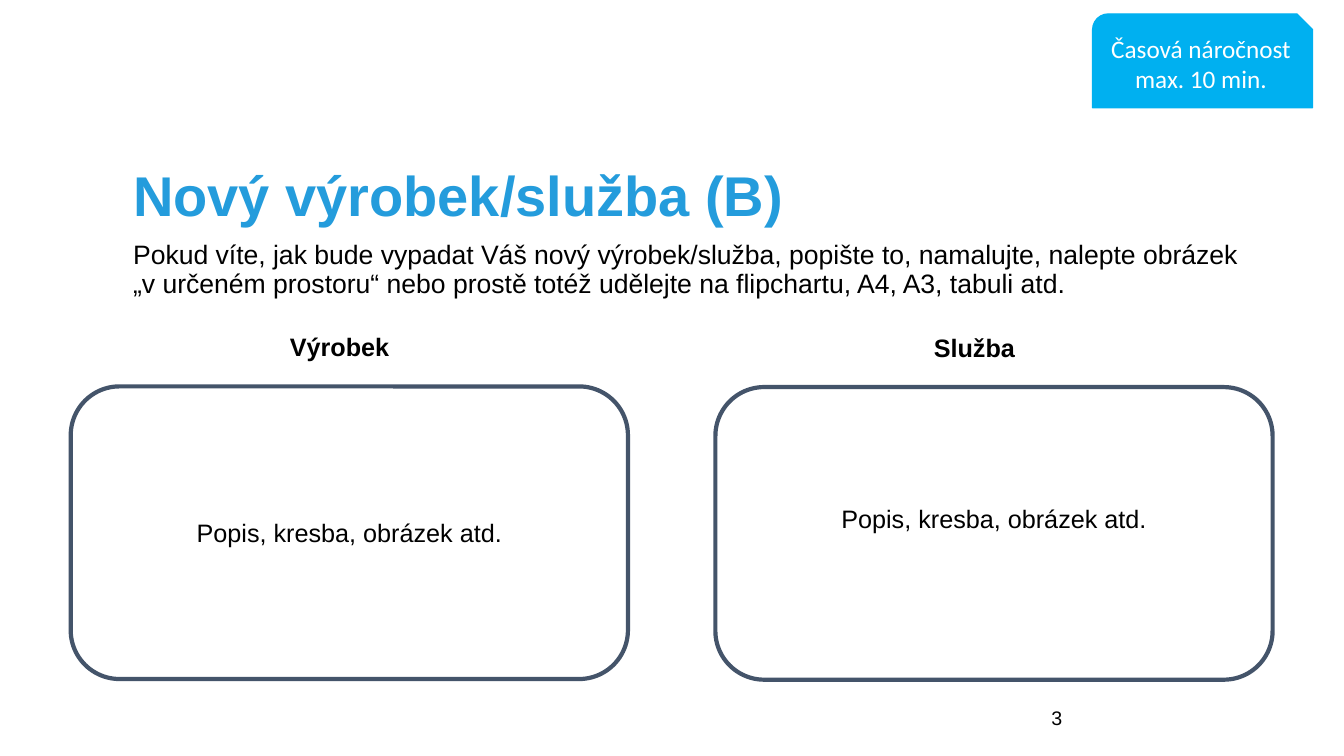
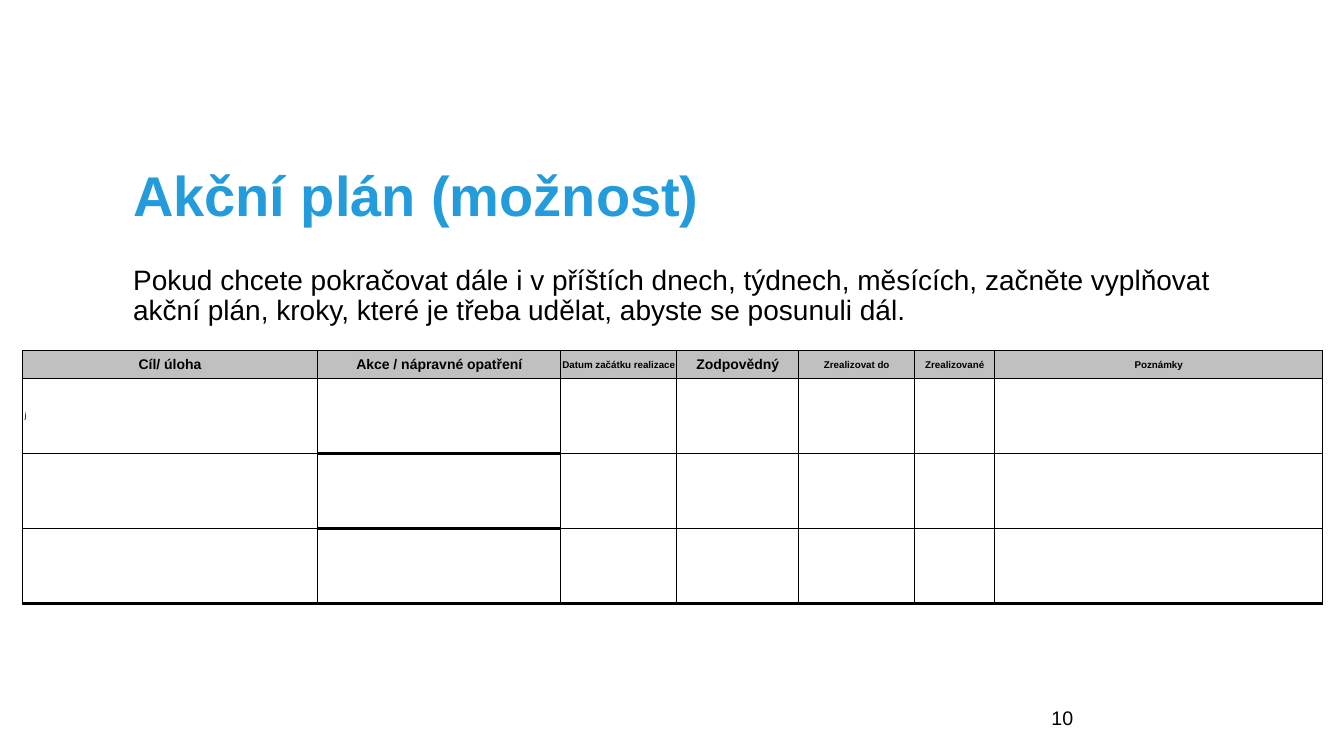
from lxml import etree
from pptx import Presentation
from pptx.dml.color import RGBColor
from pptx.enum.shapes import MSO_SHAPE
from pptx.enum.text import MSO_ANCHOR, PP_ALIGN
from pptx.oxml.ns import qn
from pptx.util import Pt

ROUND = MSO_SHAPE.ROUNDED_RECTANGLE
SNIP = MSO_SHAPE.SNIP_ROUND_RECTANGLE
TOP, MIDDLE = MSO_ANCHOR.TOP, MSO_ANCHOR.MIDDLE
LEFT, CENTER = PP_ALIGN.LEFT, PP_ALIGN.CENTER

BLACK, WHITE, GREY = "000000", "FFFFFF", "C0C0C0"
BLUE, SKY, SLATE = "249CDC", "00B0F0", "44546A"
TITLE = {"name": "Arial", "size": Pt(40), "bold": True}
NOTE = {"name": "Arial", "size": Pt(18)}
LABEL = {**NOTE, "bold": True}
BADGE = {"name": "Calibri", "size": Pt(18)}
NUMBER = {"name": "Arial", "size": Pt(14)}

MARGIN = 88
HEADS = [  # text, column width, font size
    ("Cíl/ úloha", 211, 10),
    ("Akce / nápravné opatření", 173.5, 10),
    ("Datum začátku realizace", 83, 7),
    ("Zodpovědný", 87, 10),
    ("Zrealizovat do", 83, 7),
    ("Zrealizované", 57, 7),
    ("Poznámky", 234.5, 7),
]


def color(code):
    return RGBColor.from_string(code)


def write(frame, lines, font, ink=BLACK, align=LEFT, anchor=TOP, space=1):
    frame.word_wrap = True
    frame.vertical_anchor = anchor
    for i, line in enumerate(lines):
        para = frame.add_paragraph() if i else frame.paragraphs[0]
        para.alignment = align
        para.line_spacing = space
        run = para.add_run()
        run.text = line
        for name, value in font.items():
            setattr(run.font, name, value)
        run.font.color.rgb = color(ink)


def add_text(slide, box, text, font, **style):
    shape = slide.shapes.add_textbox(*map(Pt, box))
    write(shape.text_frame, [text], font, **style)


def add_panel(slide, kind, box, fill, line, width):
    shape = slide.shapes.add_shape(kind, *map(Pt, box))
    shape.shadow.inherit = False
    shape.fill.solid()
    shape.fill.fore_color.rgb = color(fill)
    shape.line.color.rgb = color(line)
    shape.line.width = Pt(width)
    return shape.text_frame


def add_page(deck, title, intro, top, size, number):
    """Start a slide with its title, intro text and page number."""
    slide = deck.slides.add_slide(deck.slide_layouts[6])
    add_text(slide, (MARGIN, 85, 805, 114), title, TITLE,
             ink=BLUE, anchor=MIDDLE, space=0.9)
    add_text(slide, (MARGIN, top, 805, 64), intro,
             {"name": "Arial", "size": Pt(size)}, space=0.9)
    add_text(slide, (744, 500.5, 216, 29), number, NUMBER)
    return slide


def add_badge(slide, box):
    frame = add_panel(slide, SNIP, box, SKY, SKY, 1)
    write(frame, ["Časová náročnost", "max. 10 min."], BADGE,
          ink=WHITE, align=CENTER, anchor=MIDDLE)


def add_area(slide, box, label, shift, lift):
    """Draw a labelled sketch area; lift raises its inner text."""
    left, top, width, height = box
    add_text(slide, (left + shift, top - 43, 171, 29), label, LABEL,
             align=CENTER)
    frame = add_panel(slide, ROUND, (left, top, width, height),
                      WHITE, SLATE, 3)
    frame.margin_bottom += Pt(2 * lift)
    write(frame, ["Popis, kresba, obrázek atd."], NOTE,
          align=CENTER, anchor=MIDDLE)


def add_edges(cell, widths):
    props = cell._tc.get_or_add_tcPr()
    for side, width in widths.items():
        edge = etree.SubElement(props, qn("a:ln" + side), w=str(Pt(width)))
        fill = etree.SubElement(edge, qn("a:solidFill"))
        etree.SubElement(fill, qn("a:srgbClr"), val=BLACK)


def add_plan(slide, left, top):
    heights = [20] + [53.5] * 3
    last = len(heights) - 1
    total = sum(width for _, width, _ in HEADS)
    box = (left, top, total, sum(heights))
    table = slide.shapes.add_table(len(heights), len(HEADS),
                                   *map(Pt, box)).table
    table.first_row = table.horz_banding = False
    for row, height in zip(table.rows, heights):
        row.height = Pt(height)
    for c, (head, width, size) in enumerate(HEADS):
        table.columns[c].width = Pt(width)
        for r in range(len(heights)):
            cell = table.cell(r, c)
            for side in ("left", "right", "top", "bottom"):
                setattr(cell, "margin_" + side, 0)
            cell.vertical_anchor = MIDDLE
            thick = r == last or (c == 1 and r > 0)
            add_edges(cell, {"L": 1, "R": 1,
                             "T": 2 if c == 1 and r > 1 else 1,
                             "B": 2 if thick else 1})
            if r:
                cell.fill.background()
                continue
            cell.fill.solid()
            cell.fill.fore_color.rgb = color(GREY)
            write(cell.text_frame, [head],
                  {"name": "Arial", "size": Pt(size), "bold": True},
                  align=CENTER, anchor=MIDDLE)
    first = table.cell(1, 0)
    first.margin_left = Pt(1.7)
    write(first.text_frame, ["j"], {"name": "Arial", "size": Pt(6)},
          anchor=MIDDLE)


def main():
    deck = Presentation()
    deck.slide_width, deck.slide_height = Pt(960), Pt(540)

    slide = add_page(
        deck, "Nový výrobek/služba (B)",
        "Pokud víte, jak bude vypadat Váš nový výrobek/služba, popište to, "
        "namalujte, nalepte obrázek „v určeném prostoru“ nebo prostě totéž "
        "udělejte na flipchartu, A4, A3, tabuli atd.", 169, 19, "3")
    add_badge(slide, (780.5, 10, 157, 67))
    add_area(slide, (50.5, 276, 398, 209), "Výrobek", 106.5, 0)
    add_area(slide, (511, 276.5, 398, 209), "Služba", 99.5, 10.5)

    slide = add_page(
        deck, "Akční plán (možnost)",
        "Pokud chcete pokračovat dále i v příštích dnech, týdnech, měsících, "
        "začněte vyplňovat akční plán, kroky, které je třeba udělat, "
        "abyste se posunuli dál.", 186.5, 20, "10")
    add_plan(slide, 16, 250.5)

    deck.save("out.pptx")


if __name__ == "__main__":
    main()
